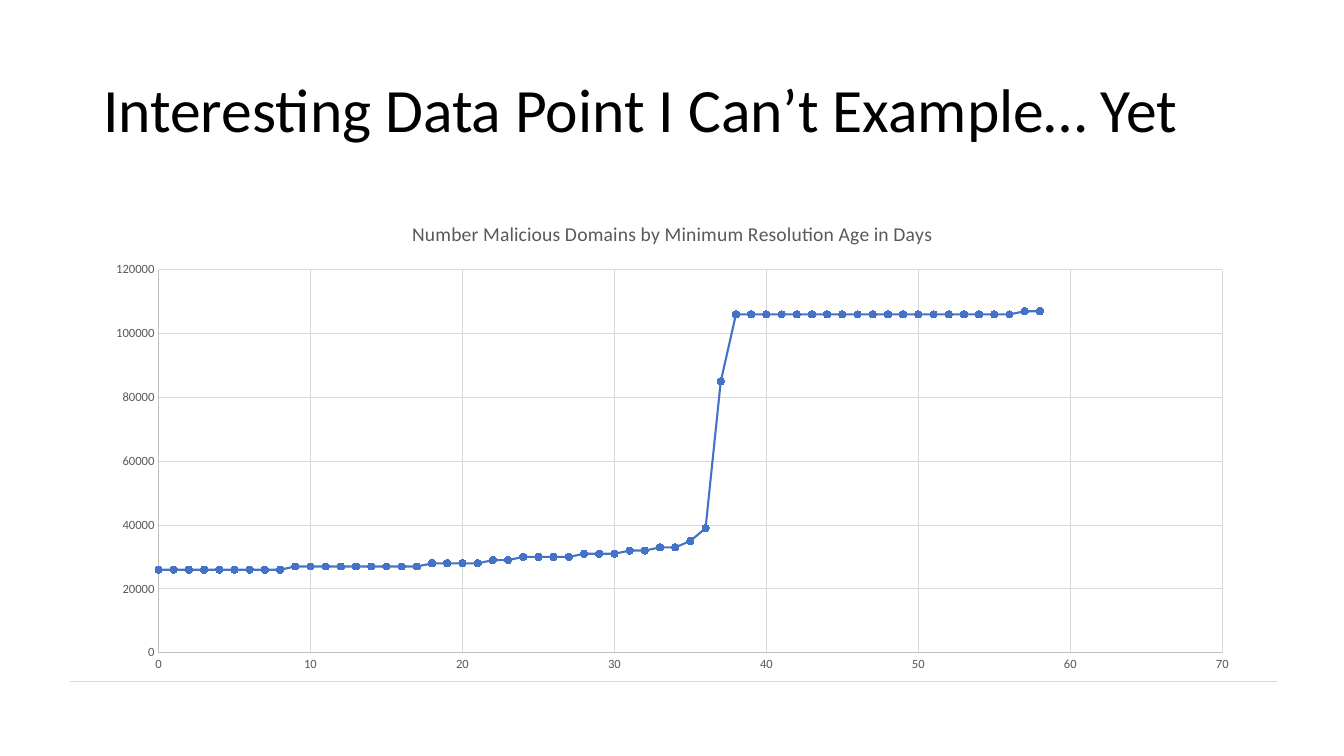
import lxml.etree
import pptx
import pptx.chart.data
import pptx.dml.color
import pptx.enum.chart
import pptx.enum.shapes
import pptx.enum.text
import pptx.oxml
import pptx.oxml.ns
import pptx.util

PX = 914400 / 100.8
FONT = "Calibri"
COLOURS = {"text": "000000", "label": "595959", "axis": "BFBFBF",
           "grid": "D9D9D9", "series": "4472C4"}


def px(*lengths):
    return [pptx.util.Emu(round(length * PX)) for length in lengths]


def style_line(line, colour, points):
    line.color.rgb = pptx.dml.color.RGBColor.from_string(COLOURS[colour])
    line.width = pptx.util.Pt(points)


deck = pptx.Presentation()
deck.slide_width, deck.slide_height = px(1344, 756)
page = deck.slides.add_slide(deck.slide_layouts[5])

# Footer rule
rule = page.shapes.add_connector(pptx.enum.shapes.MSO_CONNECTOR.STRAIGHT,
                                 *px(70, 681, 1277, 681))
style_line(rule.line, "grid", 0.5)
lxml.etree.SubElement(rule.element.spPr, pptx.oxml.ns.qn("a:effectLst"))

# Title
title = page.shapes.title
title.left, title.top, title.width, title.height = px(93, 40, 1159, 146)
title.text_frame.text = "Interesting Data Point I Can’t Example… Yet"
title.text_frame.word_wrap = True
title.text_frame.vertical_anchor = pptx.enum.text.MSO_ANCHOR.MIDDLE
para = title.text_frame.paragraphs[0]
para.alignment = pptx.enum.text.PP_ALIGN.LEFT
para.line_spacing = 0.9
para.font.name = FONT
para.font.size = pptx.util.Pt(44)
para.font.color.rgb = pptx.dml.color.RGBColor.from_string(COLOURS["text"])

# Chart data: thousands of domains as (value, number of days in a row)
domain_runs = [(26, 9), (27, 9), (28, 4), (29, 2), (30, 4), (31, 3), (32, 2),
               (33, 2), (35, 1), (39, 1), (85, 1), (106, 19), (107, 2)]
domains = [value * 1000 for value, days in domain_runs for _ in range(days)]
data = pptx.chart.data.XyChartData()
points = data.add_series("Series 1")
for day, count in enumerate(domains):
    points.add_data_point(day, count)

# Chart
chart = page.shapes.add_chart(pptx.enum.chart.XL_CHART_TYPE.XY_SCATTER_SMOOTH,
                              *px(93, 202, 1159, 479), data).chart
chart.has_legend = False
chart.font.name = FONT
chart.font.size = pptx.util.Pt(10)
chart.plots[0].vary_by_categories = False

# Chart title
chart.has_title = True
chart.chart_title.include_in_layout = False
heading = chart.chart_title.text_frame
heading.text = "Number Malicious Domains by Minimum Resolution Age in Days"
heading_font = heading.paragraphs[0].font
heading_font.name = FONT
heading_font.size = pptx.util.Pt(14)
heading_font.bold = False
heading_font.color.rgb = pptx.dml.color.RGBColor.from_string(COLOURS["label"])

# Axes
for axis, top, step in ((chart.category_axis, 70, 10),
                        (chart.value_axis, 120000, 20000)):
    axis.minimum_scale, axis.maximum_scale, axis.major_unit = 0, top, step
    axis.major_tick_mark = pptx.enum.chart.XL_TICK_MARK.NONE
    axis.minor_tick_mark = pptx.enum.chart.XL_TICK_MARK.NONE
    axis.has_major_gridlines = True
    style_line(axis.major_gridlines.format.line, "grid", 0.75)
    style_line(axis.format.line, "axis", 0.75)
    labels = axis.tick_labels
    labels.number_format = "General"
    labels.number_format_is_linked = False
    labels.font.name = FONT
    labels.font.size = pptx.util.Pt(9)
    labels.font.color.rgb = pptx.dml.color.RGBColor.from_string(COLOURS["label"])

# Series
series = chart.plots[0].series[0]
series.smooth = True
style_line(series.format.line, "series", 1.5)
series.marker.style = pptx.enum.chart.XL_MARKER_STYLE.CIRCLE
series.marker.size = 5
series.marker.format.fill.solid()
series.marker.format.fill.fore_color.rgb = pptx.dml.color.RGBColor.from_string(
    COLOURS["series"])
style_line(series.marker.format.line, "series", 0.75)

deck.save("out.pptx")
